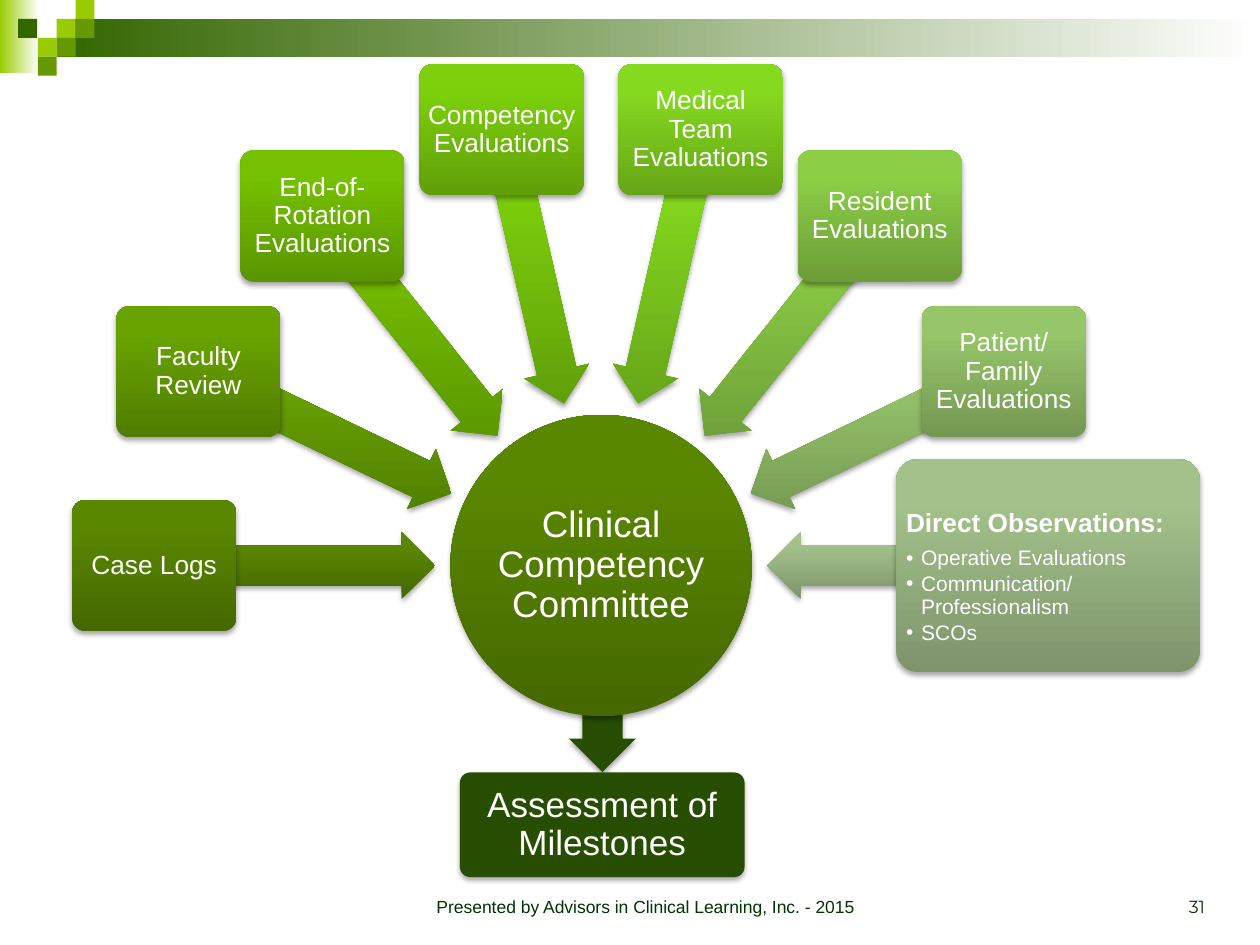
"""Build the slide on how evaluations feed the Clinical Competency Committee."""
from dataclasses import dataclass
from math import cos, radians, sin

from pptx import Presentation
from pptx.dml.color import RGBColor
from pptx.enum.shapes import MSO_SHAPE as Shape
from pptx.enum.text import MSO_ANCHOR as Anchor, MSO_AUTO_SIZE as AutoSize, PP_ALIGN as Align
from pptx.oxml import parse_xml
from pptx.oxml.ns import nsdecls, qn
from pptx.util import Pt

COLORS = {
    "white": "FFFFFF", "dark": "336600", "mid": "669900", "lime": "99CC00",
    "result": "264D00", "footer": "003300",
    "hub_low": "456800", "hub_high": "5A8700",
    "faculty_low": "507D00", "faculty_high": "68A300",
    "rotation_low": "5A9500", "rotation_high": "75C000",
    "competency_low": "609E0A", "competency_high": "7DD00B",
    "team_low": "66A518", "team_high": "85D91F",
    "resident_low": "6C9D37", "resident_high": "8CCE46",
    "patient_low": "749752", "patient_high": "96C56A",
    "direct_low": "7E946B", "direct_high": "A3C18B",
}
HUB_X, HUB_Y, HUB_SIZE = 343.5, 323.2, 172.2
ARROW_RADIUS, BOX_RADIUS = 174.8, 255.4
ARROW_LENGTH, ARROW_THICKNESS = 159.8, 38.2


@dataclass(frozen=True)
class Area:
    """Position and size in points."""
    left: float
    top: float
    width: float
    height: float


@dataclass(frozen=True)
class Source:
    """One box on the arc around the committee."""
    label: str
    tone: str
    width: float = 93.9
    height: float = 75


@dataclass(frozen=True)
class Tile:
    """One plain rectangle of the banner."""
    area: Area
    color: str
    fades: bool = False


SOURCES = [
    Source("Case Logs", "hub"),
    Source("Faculty Review", "faculty"),
    Source("End-of-Rotation Evaluations", "rotation"),
    Source("Competency Evaluations", "competency"),
    Source("Medical Team Evaluations", "team"),
    Source("Resident Evaluations", "resident"),
    Source("Patient/Family Evaluations", "patient"),
    Source("", "direct", 173.5, 121.7),
]
SQUARE = 10.8
TILES = [
    Tile(Area(0, 0, 22.3, 41.8), "lime", True),
    Tile(Area(32.4, 10.8, 687.6, 21.6), "dark", True),
] + [
    Tile(Area(left, row * SQUARE, SQUARE, SQUARE), color)
    for left, row, color in [
        (32.4, 1, "lime"), (43.2, 0, "lime"), (43.2, 1, "mid"), (21.6, 2, "lime"),
        (10.4, 1, "dark"), (32.4, 2, "mid"), (21.6, 3, "mid")]
]
OBSERVATIONS = ["Operative Evaluations", "Communication/Professionalism", "SCOs"]


def rgb(name: str) -> RGBColor:
    """Return a named colour."""
    return RGBColor.from_string(COLORS[name])


def centered(x: float, y: float, width: float, height: float) -> Area:
    """Return the area around a centre point."""
    return Area(x - width / 2, y - height / 2, width, height)


def place(box, area: Area) -> None:
    """Move and size a shape."""
    box.left, box.top = Pt(area.left), Pt(area.top)
    box.width, box.height = Pt(area.width), Pt(area.height)


def fill_gradient(box, start: str, end: str, end_at: float, angle: float) -> None:
    """Fill a shape with a gradient that stays upright when the shape turns."""
    box.fill.gradient()
    box.fill.gradient_angle = angle
    for stop, name, position in zip(box.fill.gradient_stops, (start, end), (0, end_at)):
        stop.color.rgb = rgb(name)
        stop.position = position
    box.element.spPr.find(qn("a:gradFill")).set("rotWithShape", "0")


def add_solid(slide, kind, area: Area, color: str):
    """Add a flat shape without outline or shadow."""
    box = slide.shapes.add_shape(
        kind, Pt(area.left), Pt(area.top), Pt(area.width), Pt(area.height))
    box.shadow.inherit = False
    box.fill.solid()
    box.fill.fore_color.rgb = rgb(color)
    box.line.fill.background()
    return box


def add_raised(slide, kind, area: Area, adjustments=(), tone: str = ""):
    """Add a shape with a soft shadow, shaded when a tone is given."""
    box = add_solid(slide, kind, area, "result")
    for index, value in enumerate(adjustments):
        box.adjustments[index] = value
    if tone:
        fill_gradient(box, f"{tone}_low", f"{tone}_high", 0.8, 90)
    box.element.spPr.find(qn("a:effectLst")).append(parse_xml(
        f'<a:outerShdw {nsdecls("a")} blurRad="{Pt(3.1)}" dist="{Pt(1.8)}" dir="5400000" '
        'rotWithShape="0"><a:srgbClr val="000000"><a:alpha val="35000"/></a:srgbClr>'
        '</a:outerShdw>'))
    return box


def add_arrow(slide, area: Area, rotation: float, tone: str = "") -> None:
    """Add a block arrow turned by a number of degrees."""
    arrow = add_raised(slide, Shape.LEFT_ARROW, area, (0.6, 0.5), tone)
    arrow.rotation = rotation


def set_margins(frame, side: float, top: float) -> None:
    """Set the wrapping and inner margins of a text frame."""
    frame.word_wrap = True
    frame.margin_left = frame.margin_right = Pt(side)
    frame.margin_top = frame.margin_bottom = Pt(top)


def format_para(para, size: float, color: str = "white", align=Align.CENTER,
                spacing: float = 0.9, font: str = "Arial", bold: bool = False) -> None:
    """Format a paragraph and its runs."""
    para.alignment = align
    para.line_spacing = spacing
    para.space_before = Pt(0)
    for span in para.runs:
        span.font.name, span.font.size, span.font.bold = font, Pt(size), bold
        span.font.color.rgb = rgb(color)


def label(box, text: str, size: float, margin: float = 2.2) -> None:
    """Write centred white text in a shape."""
    frame = box.text_frame
    frame.text = text
    set_margins(frame, margin, margin)
    frame.vertical_anchor = Anchor.MIDDLE
    format_para(frame.paragraphs[0], size)


def add_footer(slide, area: Area, text: str, align, font: str) -> None:
    """Add a line of footer text."""
    box = slide.shapes.add_textbox(
        Pt(area.left), Pt(area.top), Pt(area.width), Pt(area.height))
    frame = box.text_frame
    frame.text = text
    set_margins(frame, 7.2, 3.6)
    frame.vertical_anchor = Anchor.BOTTOM
    format_para(frame.paragraphs[0], 10, "footer", align, 1, font)


def set_bullet(para, indent: float, bullet: str) -> None:
    """Set the hanging indent and bullet element of a paragraph."""
    properties = para._p.get_or_add_pPr()
    properties.set("marL", str(Pt(indent)))
    properties.set("indent", str(Pt(-indent)))
    properties.append(parse_xml(f'<a:{bullet} {nsdecls("a")}/>'))


def write_observations(body) -> None:
    """Write the heading and list of direct observations."""
    place(body, Area(515.5, 289.3, 166.3, 92))
    frame = body.text_frame
    frame.auto_size = AutoSize.NONE
    frame.vertical_anchor = Anchor.TOP
    set_margins(frame, 2.2, 2.2)
    heading = frame.paragraphs[0]
    heading.text = "Direct Observations:"
    format_para(heading, 15, align=Align.LEFT, bold=True)
    heading.space_after = Pt(5.25)
    set_bullet(heading, 0, "buNone")
    for text in OBSERVATIONS:
        para = frame.add_paragraph()
        para.text, para.level = text, 1
        format_para(para, 12, align=Align.LEFT)
        para.space_after = Pt(1.8)
        set_bullet(para, 8.64, 'buChar char="•"')


def main() -> None:
    """Build and save the deck."""
    deck = Presentation()
    deck.slide_width, deck.slide_height = Pt(720), Pt(540)
    page = deck.slides.add_slide(deck.slide_layouts[1])
    title, body = page.placeholders
    title.element.getparent().remove(title.element)

    for tile in TILES:
        box = add_solid(page, Shape.RECTANGLE, tile.area, tile.color)
        if tile.fades:
            fill_gradient(box, tile.color, "white", 1, 0)

    add_arrow(page, centered(HUB_X + 0.8, 417.4, 47.5, ARROW_THICKNESS), 270)
    hub = add_raised(page, Shape.OVAL, centered(HUB_X, HUB_Y, HUB_SIZE, HUB_SIZE), tone="hub")
    label(hub, "Clinical Competency Committee", 21, 0.7)

    for index, source in enumerate(SOURCES):
        turn = 180 + index * 180 / (len(SOURCES) - 1)
        across, down = cos(radians(turn)), sin(radians(turn))
        add_arrow(page, centered(HUB_X + ARROW_RADIUS * across, HUB_Y + ARROW_RADIUS * down,
                                 ARROW_LENGTH, ARROW_THICKNESS), turn % 360, source.tone)
        area = centered(HUB_X + BOX_RADIUS * across, HUB_Y + BOX_RADIUS * down,
                        source.width, source.height)
        box = add_raised(page, Shape.ROUNDED_RECTANGLE, area, (0.1,), source.tone)
        if source.label:
            label(box, source.label, 15)

    page.shapes._spTree.append(body.element)
    write_observations(body)

    result = add_raised(page, Shape.ROUNDED_RECTANGLE, Area(262.8, 441.4, 162.7, 59.8), (0.1,))
    label(result, "Assessment of Milestones", 20)
    add_footer(page, Area(221.8, 491.8, 293.8, 36),
               "Presented by Advisors in Clinical Learning, Inc. - 2015", Align.CENTER, "Arial")
    add_footer(page, Area(527.8, 491.8, 167.8, 36), "31", Align.RIGHT, "Montserrat")
    deck.save("out.pptx")


if __name__ == "__main__":
    main()
